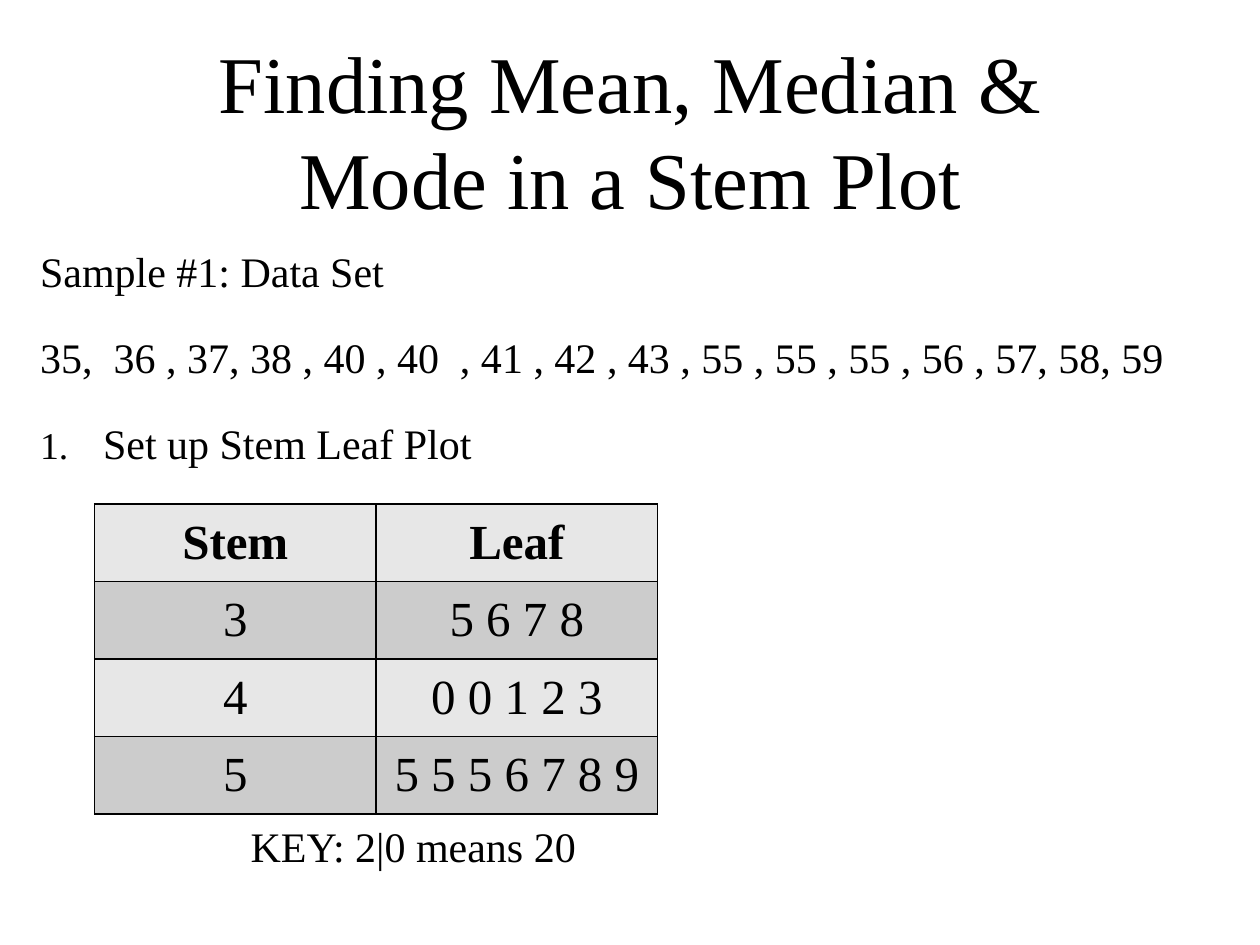
from dataclasses import dataclass

import pptx
import pptx.dml.color
import pptx.enum.text
import pptx.oxml
import pptx.oxml.ns
import pptx.util
from pptx.util import Inches

ALIGN = pptx.enum.text.PP_ALIGN
ANCHOR = pptx.enum.text.MSO_ANCHOR


@dataclass(frozen=True)
class Theme:
    font: str = "Times New Roman"
    ink: str = "000000"
    light_band: str = "E7E7E7"
    dark_band: str = "CCCCCC"
    title_size: int = 46
    body_size: int = 24
    table_size: int = 28
    leading: float = 1.2
    paragraph_gap: int = 20
    border_width: int = 1


@dataclass(frozen=True)
class Line:
    text: str
    numbered: bool = False


@dataclass(frozen=True)
class TextBlock:
    left: float
    top: float
    width: float
    height: float
    lines: tuple[Line, ...]
    size: int
    align: ALIGN = ALIGN.LEFT
    anchor: ANCHOR = ANCHOR.TOP
    wrap: bool = True


THEME = Theme()

TEXT_BLOCKS = (
    TextBlock(1, 0.55, 8, 0.95,
              (Line("Finding Mean, Median & Mode in a Stem Plot"),),
              THEME.title_size, ALIGN.CENTER, ANCHOR.MIDDLE),
    TextBlock(0.22, 1.9, 9.5, 4.44,
              (Line("Sample #1: Data Set"),
               Line("35,  36 , 37, 38 , 40 , 40  , 41 , 42 , 43 , 55 , 55 , 55 , 56 , 57, 58, 59"),
               Line("Set up Stem Leaf Plot", numbered=True)),
              THEME.body_size),
    TextBlock(1.89, 6.46, 2.82, 0.5, (Line("KEY: 2|0 means 20"),),
              THEME.body_size, wrap=False),
)

STEM_ROWS = (
    ("Stem", "Leaf"),
    ("3", "5 6 7 8"),
    ("4", "0 0 1 2 3"),
    ("5", "5 5 5 6 7 8 9"),
)


def style_font(para, size: int, bold: bool = False) -> None:
    para.font.name = THEME.font
    para.font.size = pptx.util.Pt(size)
    para.font.bold = bold
    para.font.color.rgb = pptx.dml.color.RGBColor.from_string(THEME.ink)


def add_number(para) -> None:
    """Give the paragraph a hanging automatic number."""
    properties = para._p.get_or_add_pPr()
    properties.set("marL", str(Inches(0.5)))
    properties.set("indent", str(Inches(-0.5)))
    namespace = pptx.oxml.ns.nsdecls("a")
    for tag in ('buSzPct val="90000"', 'buAutoNum type="arabicPeriod"'):
        properties.append(pptx.oxml.parse_xml(f"<a:{tag} {namespace}/>"))


def draw_text(page, block: TextBlock) -> None:
    box = page.shapes.add_textbox(Inches(block.left), Inches(block.top),
                                  Inches(block.width), Inches(block.height))
    frame = box.text_frame
    frame.word_wrap = block.wrap
    frame.vertical_anchor = block.anchor
    for index, line in enumerate(block.lines):
        para = frame.add_paragraph() if index else frame.paragraphs[0]
        para.text = line.text
        para.alignment = block.align
        para.line_spacing = pptx.util.Pt(round(block.size * THEME.leading))
        if index:
            para.space_before = pptx.util.Pt(THEME.paragraph_gap)
        if line.numbered:
            add_number(para)
        style_font(para, block.size)


def add_borders(cell) -> None:
    properties = cell._tc.get_or_add_tcPr()
    width = pptx.util.Pt(THEME.border_width)
    for side in "LRTB":
        properties.append(pptx.oxml.parse_xml(
            f'<a:ln{side} {pptx.oxml.ns.nsdecls("a")} w="{width}"><a:solidFill>'
            f'<a:srgbClr val="{THEME.ink}"/></a:solidFill></a:ln{side}>'))


def draw_stem_plot(page, rows: tuple[tuple[str, ...], ...]) -> None:
    table = page.shapes.add_table(len(rows), len(rows[0]), Inches(0.75), Inches(4),
                                  Inches(4.47), Inches(2.46)).table
    bands = (THEME.light_band, THEME.dark_band)
    for row_index, values in enumerate(rows):
        for column_index, value in enumerate(values):
            cell = table.cell(row_index, column_index)
            cell.text = value
            cell.vertical_anchor = ANCHOR.MIDDLE
            add_borders(cell)
            cell.fill.solid()
            cell.fill.fore_color.rgb = pptx.dml.color.RGBColor.from_string(bands[row_index % 2])
            para = cell.text_frame.paragraphs[0]
            para.alignment = ALIGN.CENTER
            style_font(para, THEME.table_size, bold=row_index == 0)


def main() -> None:
    deck = pptx.Presentation()
    deck.slide_width, deck.slide_height = Inches(10), Inches(7.5)
    page = deck.slides.add_slide(deck.slide_layouts[6])

    # Title, data set and key
    for block in TEXT_BLOCKS:
        draw_text(page, block)

    # Stem-and-leaf table
    draw_stem_plot(page, STEM_ROWS)

    deck.save("out.pptx")


if __name__ == "__main__":
    main()
